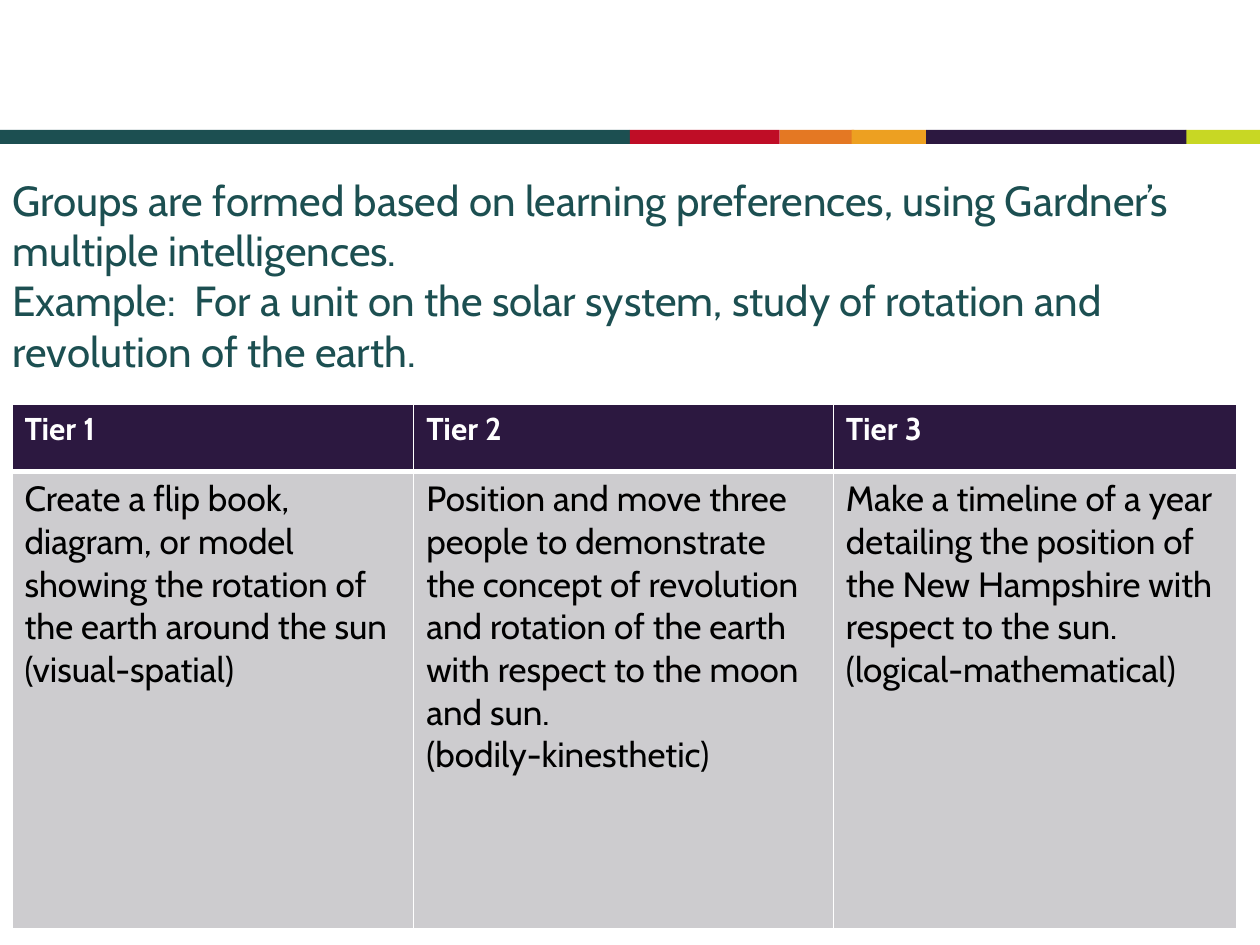
from lxml.etree import SubElement
from pptx import Presentation
from pptx.dml.color import RGBColor
from pptx.enum.shapes import MSO_SHAPE
from pptx.enum.text import MSO_ANCHOR, MSO_AUTO_SIZE, PP_ALIGN
from pptx.oxml.ns import qn
from pptx.util import Cm, Pt

HUES = {
    "teal": "1C4F51", "red": "BF0D26", "orange": "E47823", "gold": "EDA021",
    "plum": "2C1840", "lime": "C8D724", "gray": "CDCCCF",
    "white": "FFFFFF", "black": "000000",
}
BARS = [("teal", 0, 12.7), ("red", 12.7, 3.02), ("orange", 15.72, 1.5),
        ("gold", 17.17, 1.5), ("lime", 23.9, 1.5), ("plum", 18.67, 5.25)]
TITLE = ("Groups are formed based on learning preferences, using Gardner’s "
         "multiple intelligences.\nExample:  For a unit on the solar system, "
         "study of rotation and revolution of the earth.")
TIERS = [
    ("Tier 1", 8.1, ["Create a flip book, diagram, or model showing the "
                     "rotation of the earth around the sun",
                     "(visual-spatial)"]),
    ("Tier 2", 8.46, ["Position and move three people to demonstrate the "
                      "concept of revolution and rotation of the earth with "
                      "respect to the moon and sun.",
                      "(bodily-kinesthetic)"]),
    ("Tier 3", 8.13, ["Make a timeline of a year detailing the position of "
                      "the New Hampshire with respect to the sun.",
                      "(logical-mathematical)"]),
]


def tint(name):
    """Return the named colour."""
    return RGBColor.from_string(HUES[name])


def write(frame, *lines, size, hue, bold=False):
    """Fill a text frame with one formatted paragraph per line."""
    for i, line in enumerate(lines):
        para = frame.add_paragraph() if i else frame.paragraphs[0]
        para.text = line
        para.alignment = PP_ALIGN.LEFT
        for run in para.runs:
            font = run.font
            font.name, font.size, font.bold = "Cabin", Pt(size), bold
            font.color.rgb = tint(hue)


def add_bar(slide, hue, left, width):
    """Draw one block of the colour strip."""
    bar = slide.shapes.add_shape(
        MSO_SHAPE.RECTANGLE, Cm(left), Cm(2.62), Cm(width), Cm(0.28))
    bar.shadow.inherit = False
    bar.fill.solid()
    bar.fill.fore_color.rgb = tint(hue)
    bar.line.fill.background()


def add_title(slide):
    """Place and fill the title."""
    title = slide.shapes.title
    title.left, title.top = Cm(0), Cm(2.95)
    title.width, title.height = Cm(25.12), Cm(4.75)
    frame = title.text_frame
    frame.word_wrap = True
    frame.auto_size = MSO_AUTO_SIZE.NONE
    frame.vertical_anchor = MSO_ANCHOR.BOTTOM
    write(frame, TITLE, size=24, hue="teal")


def edge(cell, **sides):
    """Give cell sides white lines of the widths stated in points."""
    props = cell._tc.get_or_add_tcPr()
    for side, width in sides.items():
        line = SubElement(props, qn("a:ln" + side), w=str(Pt(width)))
        fill = SubElement(line, qn("a:solidFill"))
        SubElement(fill, qn("a:srgbClr"), val=HUES["white"])


def paint(cell, hue):
    """Fill a cell with one colour."""
    cell.fill.solid()
    cell.fill.fore_color.rgb = tint(hue)


def add_tiers(slide):
    """Build the table of tiers."""
    wide = sum(width for _, width, _ in TIERS)
    table = slide.shapes.add_table(
        2, len(TIERS), Cm(0.24), Cm(8.14), Cm(wide), Cm(10.59)).table
    table.rows[0].height, table.rows[1].height = Cm(1.37), Cm(9.22)
    for col, (name, width, tasks) in enumerate(TIERS):
        table.columns[col].width = Cm(width)
        head, body = table.cell(0, col), table.cell(1, col)
        edge(head, L=1, R=1, T=1, B=3)
        edge(body, L=1, R=1, T=3, B=1)
        paint(head, "plum")
        paint(body, "gray")
        write(head.text_frame, name, size=18, hue="white", bold=True)
        write(body.text_frame, *tasks, size=20, hue="black")


def main():
    """Build and save the slide."""
    deck = Presentation()
    deck.slide_width, deck.slide_height = Cm(25.4), Cm(19.05)
    slide = deck.slides.add_slide(deck.slide_layouts[5])
    for bar in BARS:
        add_bar(slide, *bar)
    add_title(slide)
    add_tiers(slide)
    deck.save("out.pptx")


if __name__ == "__main__":
    main()
